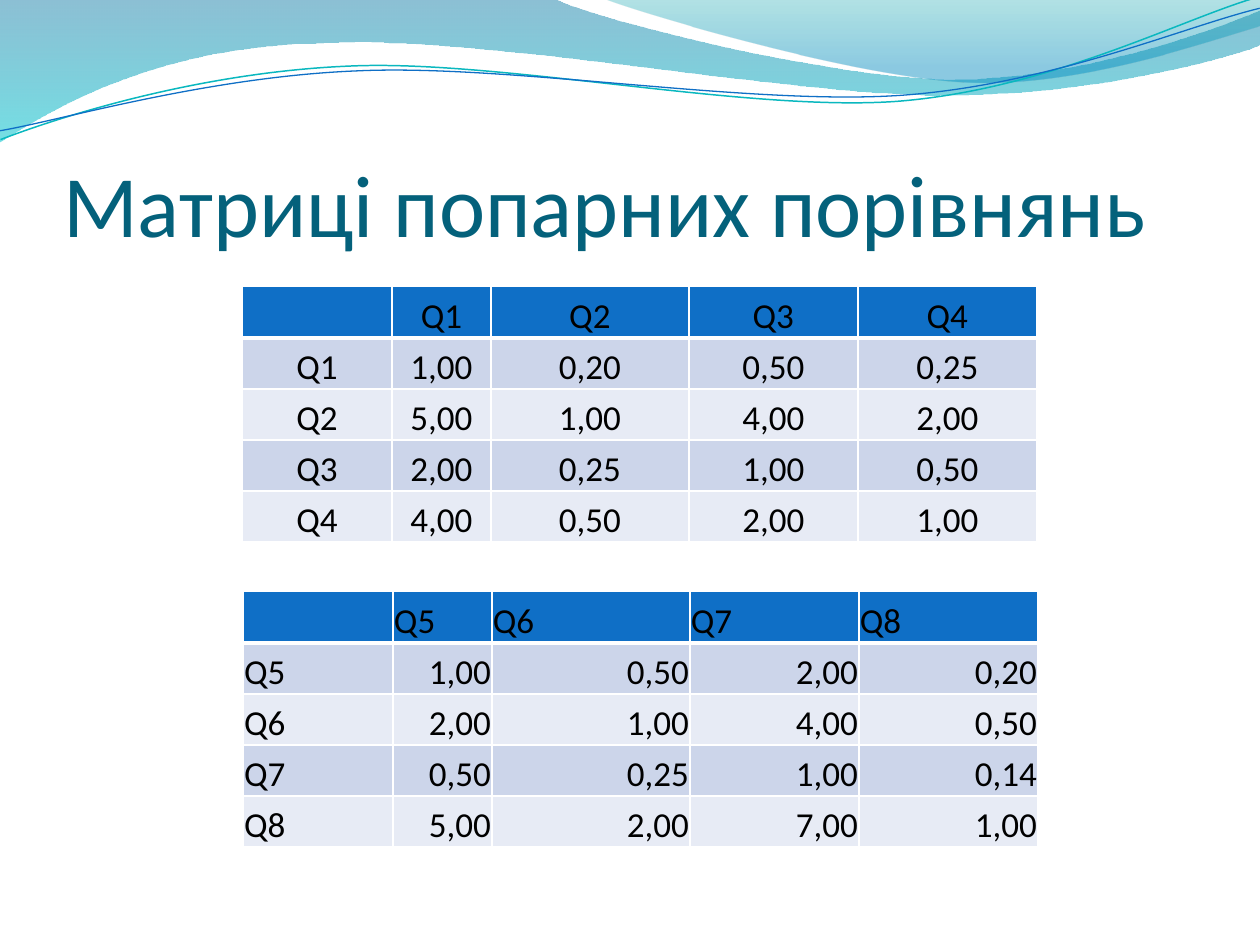
from dataclasses import dataclass

from lxml.etree import SubElement
from pptx import Presentation
from pptx.dml.color import RGBColor
from pptx.enum.text import MSO_ANCHOR as Anchor, MSO_AUTO_SIZE as AutoSize, PP_ALIGN as Align
from pptx.oxml.ns import qn
from pptx.util import Emu, Pt

EMU_PER_PX = 914400 / 126


@dataclass(frozen=True)
class Theme:
    font: str = "Calibri"
    title_size: int = 50
    cell_size: int = 20
    title: str = "04617B"
    text: str = "000000"
    header: str = "0F6FC6"
    bands: tuple = ("CCD5EA", "E7EBF5")
    border: str = "FFFFFF"
    border_width: int = 1
    header_rule: int = 3
    # Gradient stops: position %, colour, opacity %
    wide_wave: tuple = ((0, "0074A1", 45), (100, "00C6CF", 55))
    right_wave: tuple = ((0, "00A1A9", 30), (80, "008BBF", 45))
    teal_line: tuple = ("0AB8BF", 0.85)
    blue_line: tuple = ("0F6FC6", 0.75)


THEME = Theme()

# Each outline is a start point, then line ends (x, y) or cubic curves (six numbers).
WIDE_WAVE = [
    (0, 0), (554, -1), (600, 21, 837, 79, 955, 79), (1075, 79, 1207, 33, 1260, 11),
    (1261, 45), (1238, 55, 1096, 96, 940, 95), (784, 95, 481, 35, 324, 43),
    (163, 45, 58, 105, -1, 142), (0, 0),
]
RIGHT_WAVE = [
    (604, -1), (641, 14, 859, 78, 969, 82), (1079, 87, 1211, 40, 1260, 26),
    (1260, 0), (604, -1),
]
# The two lines are given level and then tilted.
TILT = 357.3
TEAL_LINE = [
    (-2, 110), (58, 90, 200, 52, 350, 53), (499, 53, 745, 118, 896, 114),
    (1049, 109, 1184, 45, 1260, 27),
]
BLUE_LINE = [
    (-2, 101), (57, 94, 207, 57, 357, 58), (509, 58, 750, 112, 902, 108),
    (1052, 104, 1188, 52, 1262, 38),
]

COLUMN_WIDTHS = (150, 99, 198, 169, 179)
ROW_HEIGHTS = (52, 51, 51, 51, 51)
FIRST_MATRIX = [
    ("", "Q1", "Q2", "Q3", "Q4"),
    ("Q1", "1,00", "0,20", "0,50", "0,25"),
    ("Q2", "5,00", "1,00", "4,00", "2,00"),
    ("Q3", "2,00", "0,25", "1,00", "0,50"),
    ("Q4", "4,00", "0,50", "2,00", "1,00"),
]
SECOND_MATRIX = [
    ("", "Q5", "Q6", "Q7", "Q8"),
    ("Q5", "1,00", "0,50", "2,00", "0,20"),
    ("Q6", "2,00", "1,00", "4,00", "0,50"),
    ("Q7", "0,50", "0,25", "1,00", "0,14"),
    ("Q8", "5,00", "2,00", "7,00", "1,00"),
]


def px(length):
    return Emu(round(length * EMU_PER_PX))


def write_text(frame, text, size, color, align):
    paragraph = frame.paragraphs[0]
    paragraph.alignment = align
    run = paragraph.add_run()
    run.text = text
    run.font.name = THEME.font
    run.font.size = Pt(size)
    run.font.bold = False
    run.font.color.rgb = RGBColor.from_string(color)


def add_outline(slide, left, top, outline, closed):
    """Draw the outline through its end points, then bend the curved segments."""
    ends = [(px(left + segment[-2]), px(top + segment[-1])) for segment in outline]
    builder = slide.shapes.build_freeform(*ends[0])
    builder.add_line_segments(ends[1:], close=closed)
    shape = builder.convert_to_shape()
    shape.shadow.inherit = False
    lines = list(shape.element.iter(qn("a:lnTo")))
    for line, segment in zip(lines, outline[1:]):
        if len(segment) == 2:
            continue
        line.tag = qn("a:cubicBezTo")
        line.remove(line[0])
        for x, y in zip(segment[::2], segment[1::2]):
            SubElement(line, qn("a:pt"), x=str(px(left + x) - shape.left),
                       y=str(px(top + y) - shape.top))
    return shape


def fill_gradient(shape, stops):
    """Fill from top to bottom with partly transparent stops."""
    shape.fill.gradient()
    gradient = shape.element.spPr.find(qn("a:gradFill"))
    for child in list(gradient):
        gradient.remove(child)
    stop_list = SubElement(gradient, qn("a:gsLst"))
    for position, color, opacity in stops:
        stop = SubElement(stop_list, qn("a:gs"), pos=str(position * 1000))
        color_element = SubElement(stop, qn("a:srgbClr"), val=color)
        SubElement(color_element, qn("a:alpha"), val=str(opacity * 1000))
    SubElement(gradient, qn("a:lin"), ang="5400000", scaled="0")


def add_waves(slide, left, top):
    for outline, stops in ((WIDE_WAVE, THEME.wide_wave), (RIGHT_WAVE, THEME.right_wave)):
        wave = add_outline(slide, left, top, outline, closed=True)
        fill_gradient(wave, stops)
        wave.line.fill.background()
    for outline, (color, width) in ((TEAL_LINE, THEME.teal_line), (BLUE_LINE, THEME.blue_line)):
        curve = add_outline(slide, left, top, outline, closed=False)
        curve.rotation = TILT
        curve.fill.background()
        curve.line.color.rgb = RGBColor.from_string(color)
        curve.line.width = Pt(width)


def place_title(slide, left, top, width, height, text):
    title = slide.shapes.title
    title.left, title.top, title.width, title.height = map(px, (left, top, width, height))
    frame = title.text_frame
    frame.word_wrap = True
    frame.auto_size = AutoSize.NONE
    frame.vertical_anchor = Anchor.BOTTOM
    frame.margin_left = frame.margin_right = frame.margin_bottom = 0
    frame.margin_top = px(6)
    write_text(frame, text, THEME.title_size, THEME.title, Align.LEFT)


def set_borders(cell, top, bottom):
    properties = cell._tc.get_or_add_tcPr()
    side = THEME.border_width
    for name, width in (("lnL", side), ("lnR", side), ("lnT", top), ("lnB", bottom)):
        line = SubElement(properties, qn(f"a:{name}"), w=str(Pt(width)))
        fill = SubElement(line, qn("a:solidFill"))
        SubElement(fill, qn("a:srgbClr"), val=THEME.border)


def format_cell(cell, row, text, align):
    thin, thick = THEME.border_width, THEME.header_rule
    set_borders(cell, top=thick if row == 1 else thin, bottom=thick if row == 0 else thin)
    cell.fill.solid()
    color = THEME.bands[(row - 1) % 2] if row else THEME.header
    cell.fill.fore_color.rgb = RGBColor.from_string(color)
    cell.vertical_anchor = Anchor.BOTTOM
    cell.margin_left = cell.margin_right = cell.margin_top = px(1)
    cell.margin_bottom = 0
    if text:
        write_text(cell.text_frame, text, THEME.cell_size, THEME.text, align)


def add_matrix(slide, left, top, values, label_align, value_align):
    width, height = sum(COLUMN_WIDTHS), sum(ROW_HEIGHTS)
    table = slide.shapes.add_table(
        len(ROW_HEIGHTS), len(COLUMN_WIDTHS), px(left), px(top), px(width), px(height)).table
    table.first_row = table.horz_banding = False
    for column, column_width in zip(table.columns, COLUMN_WIDTHS):
        column.width = px(column_width)
    for row, texts in enumerate(values):
        table.rows[row].height = px(ROW_HEIGHTS[row])
        for column, text in enumerate(texts):
            align = value_align if row and column else label_align
            format_cell(table.cell(row, column), row, text, align)


def main():
    presentation = Presentation()
    presentation.slide_width, presentation.slide_height = px(1260), px(945)
    slide = presentation.slides.add_slide(presentation.slide_layouts[5])
    add_waves(slide, 0, 0)
    place_title(slide, 63, 97, 1134, 158, "Матриці попарних порівнянь")
    add_matrix(slide, 242, 286, FIRST_MATRIX, Align.CENTER, Align.CENTER)
    add_matrix(slide, 243, 591, SECOND_MATRIX, Align.LEFT, Align.RIGHT)
    presentation.save("out.pptx")


if __name__ == "__main__":
    main()
